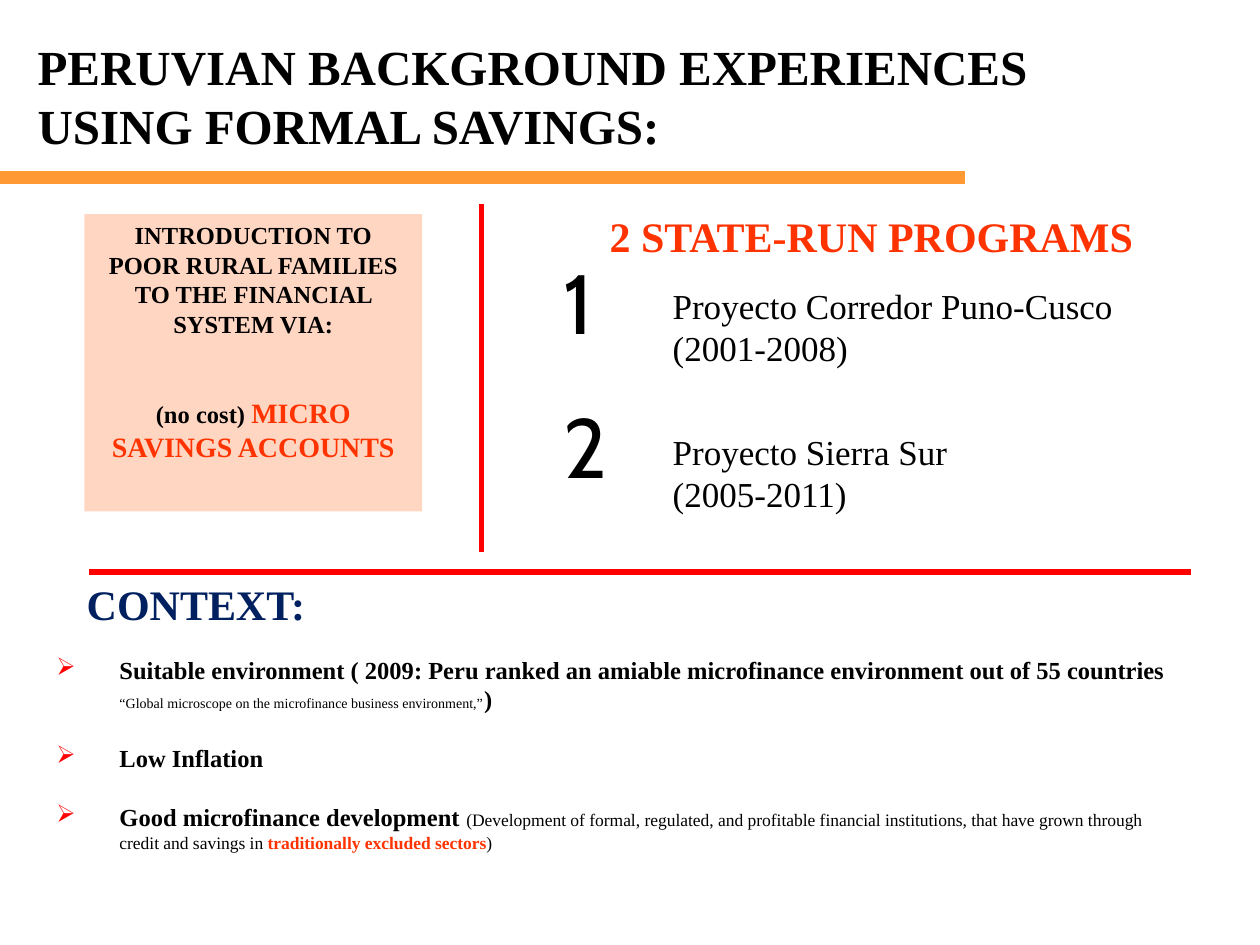
"""Build the slide on Peruvian experiences using formal savings."""
from lxml.etree import SubElement
from pptx import Presentation
from pptx.dml.color import RGBColor
from pptx.enum.shapes import MSO_CONNECTOR, MSO_SHAPE
from pptx.enum.text import MSO_ANCHOR, PP_ALIGN
from pptx.oxml.ns import qn
from pptx.util import Inches, Pt

COLORS = {
    "black": "000000", "orange": "FF9933", "peach": "FFD6C2",
    "red": "FF0000", "vermilion": "FF3300", "navy": "002060",
}

TITLE = "PERUVIAN BACKGROUND EXPERIENCES USING FORMAL SAVINGS:"
RULES = [
    ((0, 1.41), (7.66, 1.41), "orange", 7.25),
    ((3.82, 1.62), (3.82, 4.38), "red", 3),
    ((0.71, 4.54), (9.45, 4.54), "red", 3),
]
INTRODUCTION = [
    [("INTRODUCTION TO POOR RURAL FAMILIES TO THE FINANCIAL SYSTEM VIA:", {})],
    [("(no cost) ", {}),
     ("MICRO SAVINGS ACCOUNTS", {"size": 16, "color": "vermilion"})],
]
PROGRAMS = [
    ("Proyecto Corredor Puno-Cusco (2001-2008)", 4.33, 1.94, 2.21),
    ("Proyecto Sierra Sur (2005-2011)", 2.99, 3.08, 3.37),
]
SMALL = {"size": 10, "bold": False}
CONTEXT = [
    [("Suitable environment ( 2009: Peru ranked an amiable microfinance "
      "environment out of 55 countries ", {}),
     ("“Global microscope on the microfinance business environment,”",
      {"size": 8, "bold": False}),
     (")", {})],
    [("Low Inflation", {})],
    [("Good microfinance development ", {}),
     ("(Development of formal, regulated, and profitable financial "
      "institutions, that have grown through credit and savings in ", SMALL),
     ("traditionally excluded sectors", {"size": 10, "color": "vermilion"}),
     (")", SMALL)],
]


def rgb(name):
    return RGBColor.from_string(COLORS[name])


def add_bullet(paragraph):
    properties = paragraph._p.get_or_add_pPr()
    properties.set("marL", str(Inches(0.5)))
    properties.set("indent", str(Inches(-0.5)))
    color = SubElement(properties, qn("a:buClr"))
    SubElement(color, qn("a:srgbClr"), val=COLORS["red"])
    SubElement(properties, qn("a:buChar"), char="➢")


def write(box, content, size=14, color="black", bold=False,
          font="Times New Roman", align=PP_ALIGN.LEFT,
          anchor=MSO_ANCHOR.TOP, gap=0, bullet=False):
    frame = box.text_frame
    frame.word_wrap = True
    frame.vertical_anchor = anchor
    paragraphs = [[(content, {})]] if isinstance(content, str) else content
    for index, spans in enumerate(paragraphs):
        paragraph = frame.add_paragraph() if index else frame.paragraphs[0]
        paragraph.alignment = align
        if index and gap:
            paragraph.space_before = Pt(gap)
        if bullet:
            add_bullet(paragraph)
        for text, changes in spans:
            span = paragraph.add_run()
            span.text = text
            span.font.name = font
            span.font.size = Pt(changes.get("size", size))
            span.font.bold = changes.get("bold", bold)
            span.font.color.rgb = rgb(changes.get("color", color))


def add_text(page, place, content, **style):
    write(page.shapes.add_textbox(*map(Inches, place)), content, **style)


def add_rule(page, start, end, color, width):
    rule = page.shapes.add_connector(
        MSO_CONNECTOR.STRAIGHT, *map(Inches, start + end))
    rule.line.color.rgb = rgb(color)
    rule.line.width = Pt(width)
    SubElement(rule._element.spPr, qn("a:effectLst"))


def add_panel(page, place, content, **style):
    panel = page.shapes.add_shape(MSO_SHAPE.RECTANGLE, *map(Inches, place))
    panel.shadow.inherit = False
    panel.fill.solid()
    panel.fill.fore_color.rgb = rgb("peach")
    panel.line.fill.background()
    write(panel, content, **style)


def main():
    deck = Presentation()
    deck.slide_width, deck.slide_height = Inches(10), Inches(7.5)
    page = deck.slides.add_slide(deck.slide_layouts[6])
    for rule in RULES:
        add_rule(page, *rule)
    add_text(page, (0.2, 0.13, 9.3, 1.25), TITLE, size=28, bold=True,
             anchor=MSO_ANCHOR.MIDDLE)
    add_panel(page, (0.67, 1.7, 2.68, 2.36), INTRODUCTION, bold=True,
              align=PP_ALIGN.CENTER, gap=33)
    add_text(page, (4.74, 1.62, 4.51, 0.5), "2 STATE-RUN PROGRAMS",
             size=24, color="vermilion", bold=True)
    for number, (name, width, number_top, top) in enumerate(PROGRAMS, 1):
        add_text(page, (4.37, number_top, 0.71, 0.91), str(number),
                 size=48, font="Cabin")
        add_text(page, (5.24, top, width, 0.77), name, size=20)
    add_text(page, (0.59, 4.54, 2.6, 0.5), "CONTEXT:", size=24,
             color="navy", bold=True)
    add_text(page, (0.35, 5.15, 9.06, 2.3), CONTEXT, bold=True,
             gap=16.8, bullet=True)
    deck.save("out.pptx")


if __name__ == "__main__":
    main()
